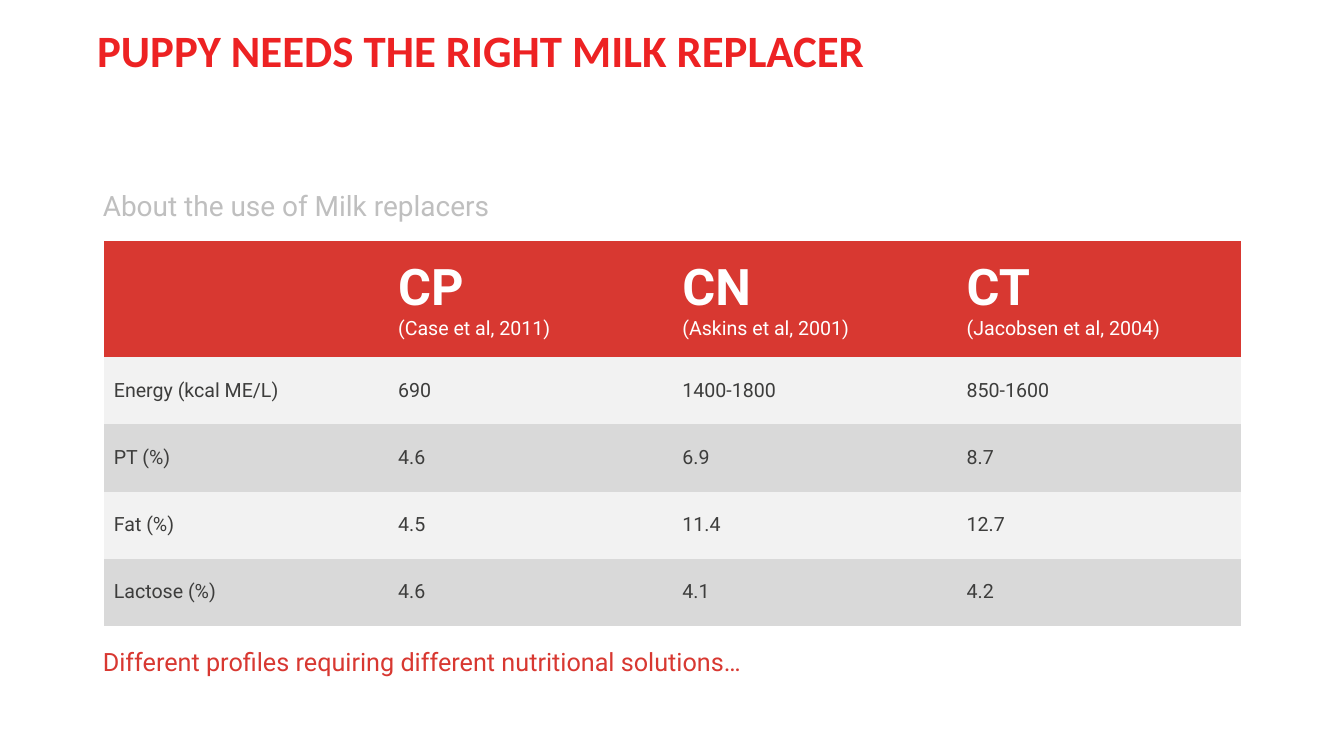
from typing import NamedTuple

import pptx
import pptx.dml.color
import pptx.enum.text
import pptx.util

Pt = pptx.util.Pt
MIDDLE = pptx.enum.text.MSO_ANCHOR.MIDDLE

COLORS = {
    "title": "ED2223",
    "red": "D83831",
    "subtitle": "BFBFBF",
    "white": "FFFFFF",
    "ink": "3D3D3C",
    "light_row": "F2F2F2",
    "dark_row": "D9D9D9",
}
NO_STYLE_NO_GRID = "{2D5ABB26-0587-4C30-8999-92F81FD0307C}"
COLUMN_WIDTH = 406.1
HEADER_HEIGHT = 165.6
ROW_HEIGHT = 95.9


class Style(NamedTuple):
    size: float
    color: str
    bold: bool = False
    font: str = "Roboto"


class Line(NamedTuple):
    text: str
    left: float
    top: float
    style: Style
    inset_x: float = 14.4
    inset_y: float = 7.2


class Replacer(NamedTuple):
    code: str
    citation: str
    values: tuple[str, ...]


CODE_STYLE = Style(72, "white", bold=True)
CITATION_STYLE = Style(28, "white")
BODY_STYLE = Style(28, "ink")

LINES = [
    Line("PUPPY NEEDS THE RIGHT MILK REPLACER", 131.8, 0,
         Style(64, "title", bold=True, font="Calibri"), 7.2, 3.6),
    Line("About the use of Milk replacers", 132.5, 220.3, Style(40, "subtitle")),
    Line("Different profiles requiring different nutritional solutions…", 132.5, 871.9,
         Style(36, "red")),
]
NUTRIENTS = ["Energy (kcal ME/L)", "PT (%)", "Fat (%)", "Lactose (%)"]
REPLACERS = [
    Replacer("CP", "(Case et al, 2011)", ("690", "4.6", "4.5", "4.6")),
    Replacer("CN", "(Askins et al, 2001)", ("1400-1800", "6.9", "11.4", "4.1")),
    Replacer("CT", "(Jacobsen et al, 2004)", ("850-1600", "8.7", "12.7", "4.2")),
]


def rgb(name: str) -> pptx.dml.color.RGBColor:
    return pptx.dml.color.RGBColor.from_string(COLORS[name])


def add_run(paragraph, text: str, style: Style) -> None:
    run = paragraph.add_run()
    run.text = text
    run.font.size = Pt(style.size)
    run.font.name = style.font
    run.font.bold = style.bold
    run.font.color.rgb = rgb(style.color)


def set_margins(holder, inset_x: float, inset_y: float) -> None:
    holder.margin_left = holder.margin_right = Pt(inset_x)
    holder.margin_top = holder.margin_bottom = Pt(inset_y)


def draw_line(slide, line: Line) -> None:
    frame = slide.shapes.add_textbox(Pt(line.left), Pt(line.top), Pt(1656), Pt(151.9)).text_frame
    frame.word_wrap = True
    frame.vertical_anchor = MIDDLE
    set_margins(frame, line.inset_x, line.inset_y)
    frame.paragraphs[0].line_spacing = 0.9
    add_run(frame.paragraphs[0], line.text, line.style)


def fill_cell(cell, fill: str, *parts: tuple[str, Style]) -> None:
    cell.fill.solid()
    cell.fill.fore_color.rgb = rgb(fill)
    cell.vertical_anchor = MIDDLE
    set_margins(cell, 14.4, 7.2)
    frame = cell.text_frame
    for index, (text, style) in enumerate(parts):
        paragraph = frame.add_paragraph() if index else frame.paragraphs[0]
        add_run(paragraph, text, style)


def draw_profiles(slide) -> None:
    row_count, column_count = len(NUTRIENTS) + 1, len(REPLACERS) + 1
    profiles = slide.shapes.add_table(
        row_count, column_count, Pt(148.3), Pt(344.9), Pt(COLUMN_WIDTH * column_count),
        Pt(HEADER_HEIGHT + ROW_HEIGHT * len(NUTRIENTS))).table
    profiles.horz_banding = False
    profiles._tbl.tblPr.find(pptx.oxml.ns.qn("a:tableStyleId")).text = NO_STYLE_NO_GRID
    for column in profiles.columns:
        column.width = Pt(COLUMN_WIDTH)
    for index, row in enumerate(profiles.rows):
        row.height = Pt(ROW_HEIGHT if index else HEADER_HEIGHT)

    fill_cell(profiles.cell(0, 0), "red")
    for column, replacer in enumerate(REPLACERS, 1):
        fill_cell(profiles.cell(0, column), "red",
                  (replacer.code, CODE_STYLE), (replacer.citation, CITATION_STYLE))
    for index, nutrient in enumerate(NUTRIENTS):
        band = "dark_row" if index % 2 else "light_row"
        texts = [nutrient, *(replacer.values[index] for replacer in REPLACERS)]
        for column, text in enumerate(texts):
            fill_cell(profiles.cell(index + 1, column), band, (text, BODY_STYLE))


def main() -> None:
    deck = pptx.Presentation()
    deck.slide_width, deck.slide_height = Pt(1920), Pt(1080)
    slide = deck.slides.add_slide(deck.slide_layouts[6])
    draw_profiles(slide)
    for line in LINES:
        draw_line(slide, line)
    deck.save("out.pptx")


if __name__ == "__main__":
    main()
